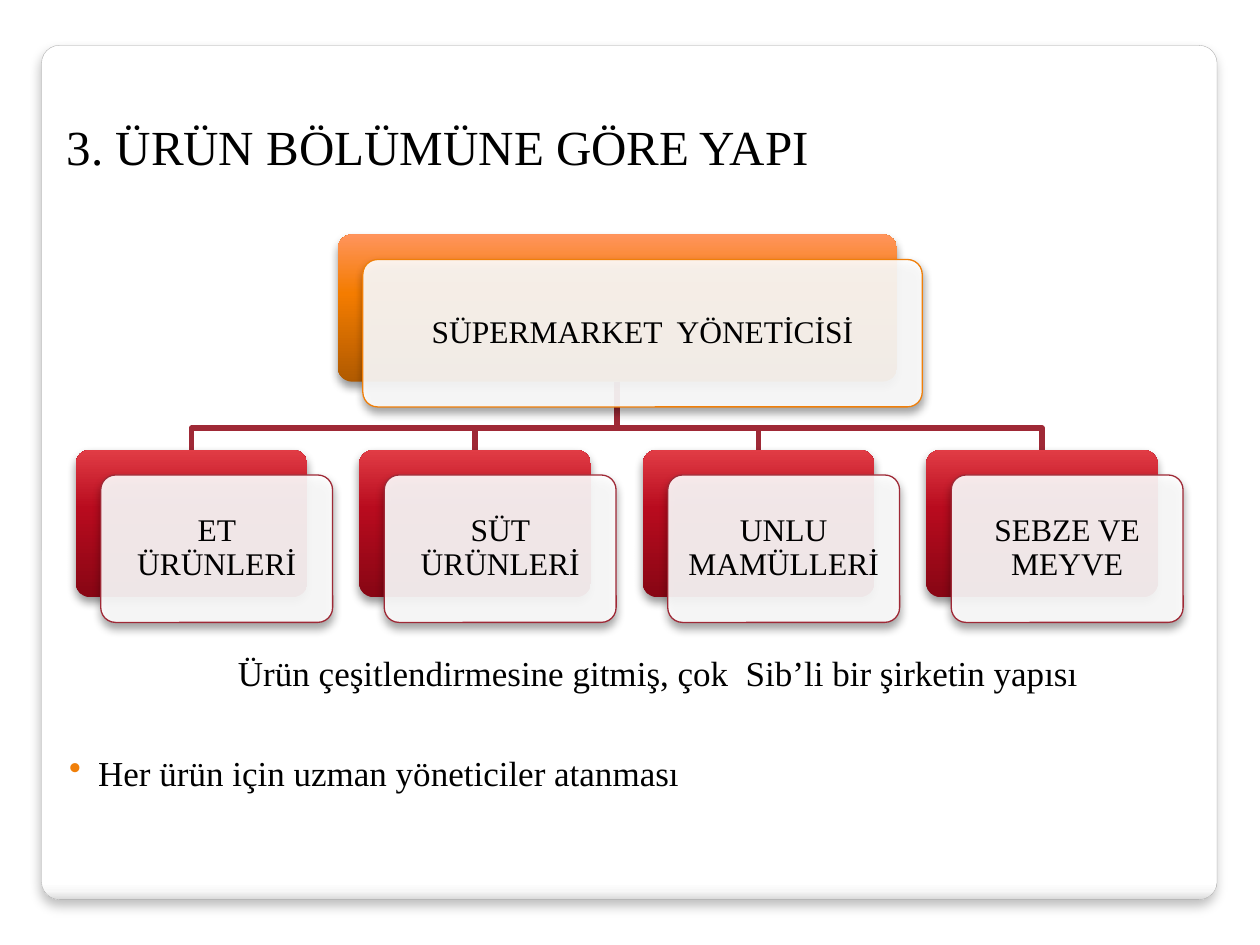
from dataclasses import dataclass

import pptx
import pptx.dml.color
import pptx.enum.shapes
import pptx.enum.text
import pptx.oxml
import pptx.oxml.ns
import pptx.util
from pptx.util import Inches

FONT = "Times New Roman"
BLACK = "000000"
CARD_HEIGHT = 1.17
CARD_OFFSET = 0.2
CHILD_TOP = 3.57
CHILD_WIDTH = 1.84
CHILD_PITCH = 2.25
BUS_TOP = 3.4


@dataclass
class Theme:
    stops: list[tuple[int, str]]
    outline: str


@dataclass
class Card:
    label: str
    left: float
    top: float
    width: float
    theme: Theme

    @property
    def center(self) -> float:
        return self.left + self.width / 2


@dataclass
class Shadow:
    opacity: int
    blur: float
    distance: float


ORANGE = Theme([(0, "B05A00"), (60, "F47C00"), (100, "FF945C")], "F07F09")
RED = Theme([(0, "870614"), (60, "B80B1E"), (100, "E13C45")], "9F2936")
PANEL_STOPS = [(0, "FFFFFF"), (98, "FFFFFF"), (99, "F7F7F7"), (100, "DADADA")]
CARD_SHADOW = Shadow(40, 5.2, 3)
PANEL_SHADOW = Shadow(25, 6, 4)

MANAGER = Card("SÜPERMARKET  YÖNETİCİSİ", 2.68, 1.86, 4.44, ORANGE)
DEPARTMENTS = [
    Card(label, 0.6 + index * CHILD_PITCH, CHILD_TOP, CHILD_WIDTH, RED)
    for index, label in enumerate(
        ["ET ÜRÜNLERİ", "SÜT ÜRÜNLERİ", "UNLU MAMÜLLERİ", "SEBZE VE MEYVE"]
    )
]


def color(value: str) -> pptx.dml.color.RGBColor:
    return pptx.dml.color.RGBColor.from_string(value)


def xml(markup: str):
    name, rest = markup.split(" ", 1)
    return pptx.oxml.parse_xml(f"{name} {pptx.oxml.ns.nsdecls('a')} {rest}")


def add_shadow(shape, shadow: Shadow) -> None:
    shape.shadow.inherit = False
    effects = shape.element.spPr.find(pptx.oxml.ns.qn("a:effectLst"))
    effects.append(xml(
        f'<a:outerShdw blurRad="{pptx.util.Pt(shadow.blur)}" '
        f'dist="{pptx.util.Pt(shadow.distance)}" dir="5400000" rotWithShape="0">'
        f'<a:srgbClr val="{BLACK}"><a:alpha val="{shadow.opacity * 1000}"/></a:srgbClr>'
        "</a:outerShdw>"
    ))


def fill_gradient(shape, stops: list[tuple[int, str]], angle: int) -> None:
    shape.fill.gradient()
    shape.fill.gradient_angle = angle
    stop_list = next(shape.element.spPr.iter(pptx.oxml.ns.qn("a:gsLst")))
    for stop in list(stop_list):
        stop_list.remove(stop)
    for position, value in stops:
        stop_list.append(xml(
            f'<a:gs pos="{position * 1000}"><a:srgbClr val="{value}"/></a:gs>'
        ))


def add_rounded(page, left: float, top: float, width: float, height: float,
                radius: float, shadow: Shadow):
    shape = page.shapes.add_shape(
        pptx.enum.shapes.MSO_SHAPE.ROUNDED_RECTANGLE,
        Inches(left), Inches(top), Inches(width), Inches(height),
    )
    shape.adjustments[0] = radius
    add_shadow(shape, shadow)
    return shape


def set_font(para, size: int) -> None:
    para.font.name = FONT
    para.font.size = pptx.util.Pt(size)
    para.font.color.rgb = color(BLACK)


def add_panel(page) -> None:
    panel = add_rounded(page, 0.33, 0.36, 9.33, 6.78, 0.021, PANEL_SHADOW)
    fill_gradient(panel, PANEL_STOPS, 270)
    panel.line.color.rgb = color("A4A4A4")
    panel.line.width = pptx.util.Pt(0.16)
    page.shapes.element.insert(2, panel.element)


def add_title(page) -> None:
    title = page.shapes.title
    title.left, title.top = Inches(0.43), Inches(0.84)
    title.width, title.height = Inches(6.38), Inches(0.63)
    title.text_frame.text = "3. ÜRÜN BÖLÜMÜNE GÖRE YAPI"
    title.text_frame.vertical_anchor = pptx.enum.text.MSO_ANCHOR.MIDDLE
    para = title.text_frame.paragraphs[0]
    para.alignment = pptx.enum.text.PP_ALIGN.LEFT
    set_font(para, 28)


def add_branch(page, parent: Card, child: Card) -> None:
    start = parent.top + CARD_HEIGHT
    builder = page.shapes.build_freeform(Inches(parent.center), Inches(start))
    corners = [(parent.center, BUS_TOP), (child.center, BUS_TOP), (child.center, child.top)]
    builder.add_line_segments([(Inches(x), Inches(y)) for x, y in corners], close=False)
    branch = builder.convert_to_shape()
    branch.fill.background()
    branch.line.color.rgb = color(RED.outline)
    branch.line.width = pptx.util.Pt(3.35)
    branch.shadow.inherit = False


def add_card(page, card: Card) -> None:
    back = add_rounded(page, card.left, card.top, card.width, CARD_HEIGHT, 0.1, CARD_SHADOW)
    fill_gradient(back, card.theme.stops, 90)
    back.line.fill.background()

    front = add_rounded(page, card.left + CARD_OFFSET, card.top + CARD_OFFSET,
                        card.width, CARD_HEIGHT, 0.1, CARD_SHADOW)
    front.fill.solid()
    front.fill.fore_color.rgb = color("FFFFFF")
    next(front.element.spPr.iter(pptx.oxml.ns.qn("a:srgbClr"))).append(
        xml('<a:alpha val="90000"/>')
    )
    front.line.color.rgb = color(card.theme.outline)
    front.line.width = pptx.util.Pt(0.75)
    frame = front.text_frame
    frame.margin_left = frame.margin_right = Inches(0.1)
    frame.vertical_anchor = pptx.enum.text.MSO_ANCHOR.MIDDLE
    frame.text = card.label
    para = frame.paragraphs[0]
    para.alignment = pptx.enum.text.PP_ALIGN.CENTER
    para.line_spacing = 0.9
    set_font(para, 18)


def add_note(page, text: str, left: float, top: float, width: float, bullet: bool) -> None:
    box = page.shapes.add_textbox(Inches(left), Inches(top), Inches(width), Inches(0.47))
    box.text_frame.word_wrap = True
    box.text_frame.text = text
    para = box.text_frame.paragraphs[0]
    para.alignment = pptx.enum.text.PP_ALIGN.JUSTIFY
    para.line_spacing = 1.1
    properties = para._p.get_or_add_pPr()
    properties.set("marL", str(Inches(0.64)))
    properties.set("indent", str(Inches(-0.23)))
    if bullet:
        properties.append(xml(
            f'<a:buClr ><a:srgbClr val="{ORANGE.outline}"/></a:buClr>'
        ))
        properties.append(xml('<a:buChar char="•"/>'))
    set_font(para, 20)


def main() -> None:
    deck = pptx.Presentation()
    deck.slide_width, deck.slide_height = Inches(10), Inches(7.5)
    page = deck.slides.add_slide(deck.slide_layouts.get_by_name("Title Only"))
    add_panel(page)
    add_title(page)
    add_note(page, "Her ürün için uzman yöneticiler atanması", 0.04, 5.88, 7.64, True)
    for department in DEPARTMENTS:
        add_branch(page, MANAGER, department)
    for card in [MANAGER, *DEPARTMENTS]:
        add_card(page, card)
    add_note(page, "Ürün çeşitlendirmesine gitmiş, çok  Sib’li bir şirketin yapısı",
             1.38, 5.09, 8.11, False)
    deck.save("out.pptx")


if __name__ == "__main__":
    main()
